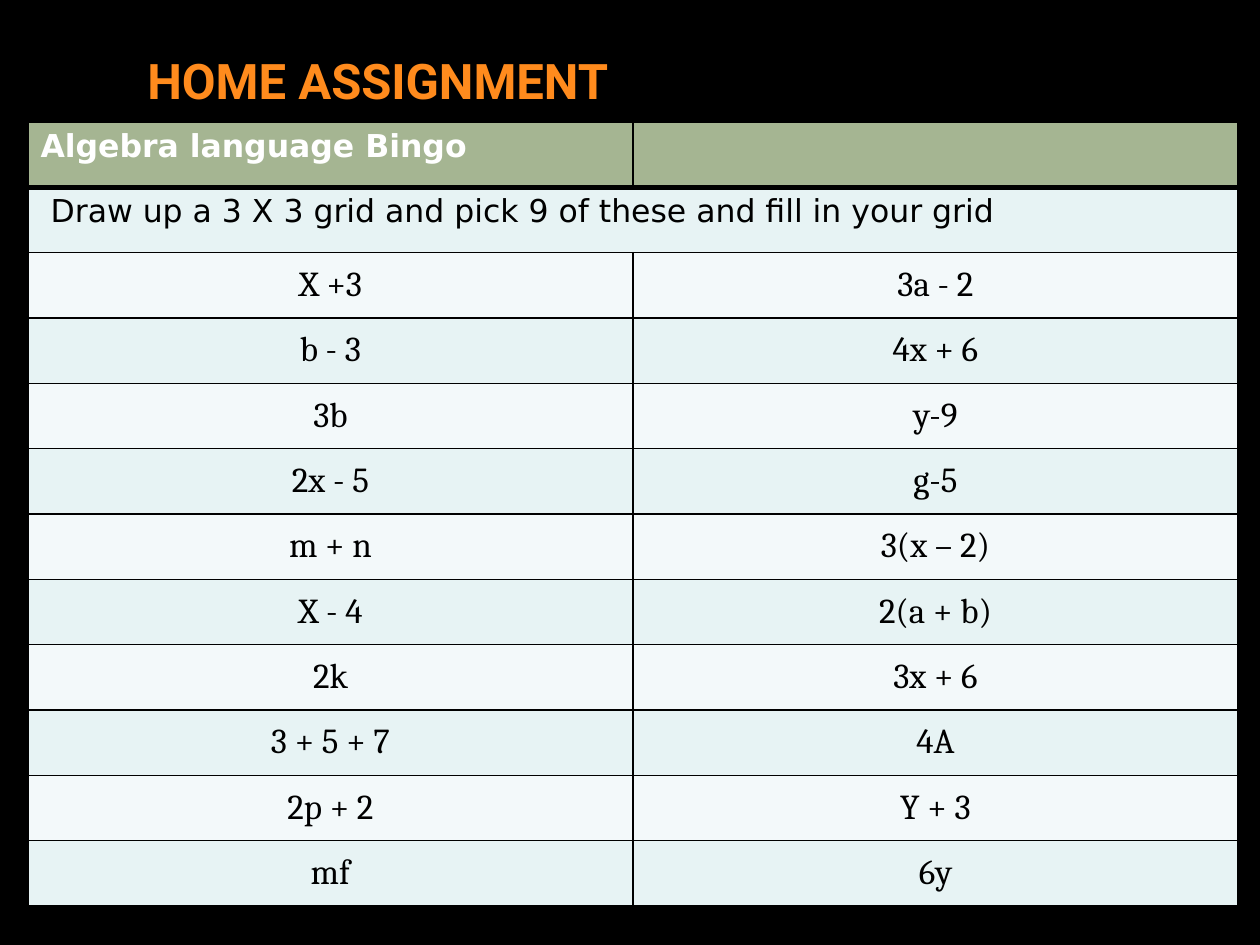
from lxml.etree import SubElement
from pptx import Presentation
from pptx.dml.color import RGBColor
from pptx.enum.text import MSO_ANCHOR as Anchor, MSO_AUTO_SIZE as AutoSize, PP_ALIGN as Align
from pptx.oxml.ns import qn
from pptx.util import Emu, Pt

PX_PER_INCH = 126
COLORS = {
    "background": "000000",
    "title": "FF8B1D",
    "header": "A5B592",
    "header_text": "FFFFFF",
    "body_text": "000000",
    "border": "000000",
    "band_dark": "E7F3F4",
    "band_light": "F3F9FA",
}
HEADING = "Algebra language Bingo"
INSTRUCTION = " Draw up a 3 X 3 grid and pick 9 of these and fill in your grid"
EXPRESSIONS = [
    ("X +3", "3a - 2"),
    ("b - 3", "4x + 6"),
    ("3b", "y-9"),
    ("2x - 5", "g-5"),
    ("m + n", "3(x – 2)"),
    ("X - 4", "2(a + b)"),
    ("2k", "3x + 6"),
    ("3 + 5 + 7", "4A"),
    ("2p + 2", "Y + 3"),
    ("mf", "6y"),
]


def px(length):
    return Emu(round(length * 914400 / PX_PER_INCH))


def color(name):
    return RGBColor.from_string(COLORS[name])


def add_run(paragraph, text, font, size, color_name, bold=False):
    run = paragraph.add_run()
    run.text = text
    run.font.name = font
    run.font.size = Pt(size)
    run.font.bold = bold
    run.font.color.rgb = color(color_name)


def add_title(slide, left, top, width, height):
    title = slide.shapes.add_textbox(px(left), px(top), px(width), px(height))
    frame = title.text_frame
    frame.word_wrap = True
    frame.auto_size = AutoSize.SHAPE_TO_FIT_TEXT
    add_run(frame.paragraphs[0], "HOME ASSIGNMENT", "Roboto", 28, "title", bold=True)


def style_cell(cell, fill, top=1, bottom=1):
    """Set the fill and the borders; top and bottom are line widths in points."""
    properties = cell._tc.get_or_add_tcPr()
    for side, points in (("L", 1), ("R", 1), ("T", top), ("B", bottom)):
        line = SubElement(properties, qn(f"a:ln{side}"), w=str(Pt(points)))
        line_fill = SubElement(line, qn("a:solidFill"))
        SubElement(line_fill, qn("a:srgbClr"), val=COLORS["border"])
    cell.fill.solid()
    cell.fill.fore_color.rgb = color(fill)


def fill_expression(cell, expression):
    cell.vertical_anchor = Anchor.MIDDLE
    cell.margin_left = cell.margin_right = px(9)
    cell.margin_top = cell.margin_bottom = 0
    paragraph = cell.text_frame.paragraphs[0]
    paragraph.alignment = Align.CENTER
    add_run(paragraph, expression, "Cambria", 20, "body_text")


def add_bingo_table(slide, left, top, width, height):
    row_count = len(EXPRESSIONS) + 2
    table = slide.shapes.add_table(
        row_count, 2, px(left), px(top), px(width), px(height)
    ).table
    for column in table.columns:
        column.width = px(width / 2)
    for row in table.rows:
        row.height = px(height / row_count)

    heading, instruction = table.cell(0, 0), table.cell(1, 0)
    instruction.merge(table.cell(1, 1))
    for column in range(2):
        style_cell(table.cell(0, column), "header", bottom=3)
        style_cell(table.cell(1, column), "band_dark", top=3)
    add_run(heading.text_frame.paragraphs[0], HEADING,
            "DejaVu Sans", 18, "header_text", bold=True)
    add_run(instruction.text_frame.paragraphs[0], INSTRUCTION,
            "DejaVu Sans", 18, "body_text")

    for row, pair in enumerate(EXPRESSIONS, start=2):
        band = "band_dark" if row % 2 else "band_light"
        for column, expression in enumerate(pair):
            cell = table.cell(row, column)
            style_cell(cell, band)
            fill_expression(cell, expression)


def main():
    deck = Presentation()
    deck.slide_width, deck.slide_height = px(1260), px(945)
    slide = deck.slides.add_slide(deck.slide_layouts[6])
    slide.background.fill.solid()
    slide.background.fill.fore_color.rgb = color("background")
    add_bingo_table(slide, 28, 122, 1210, 784)
    add_title(slide, 135, 44, 847, 72)
    deck.save("out.pptx")


if __name__ == "__main__":
    main()
